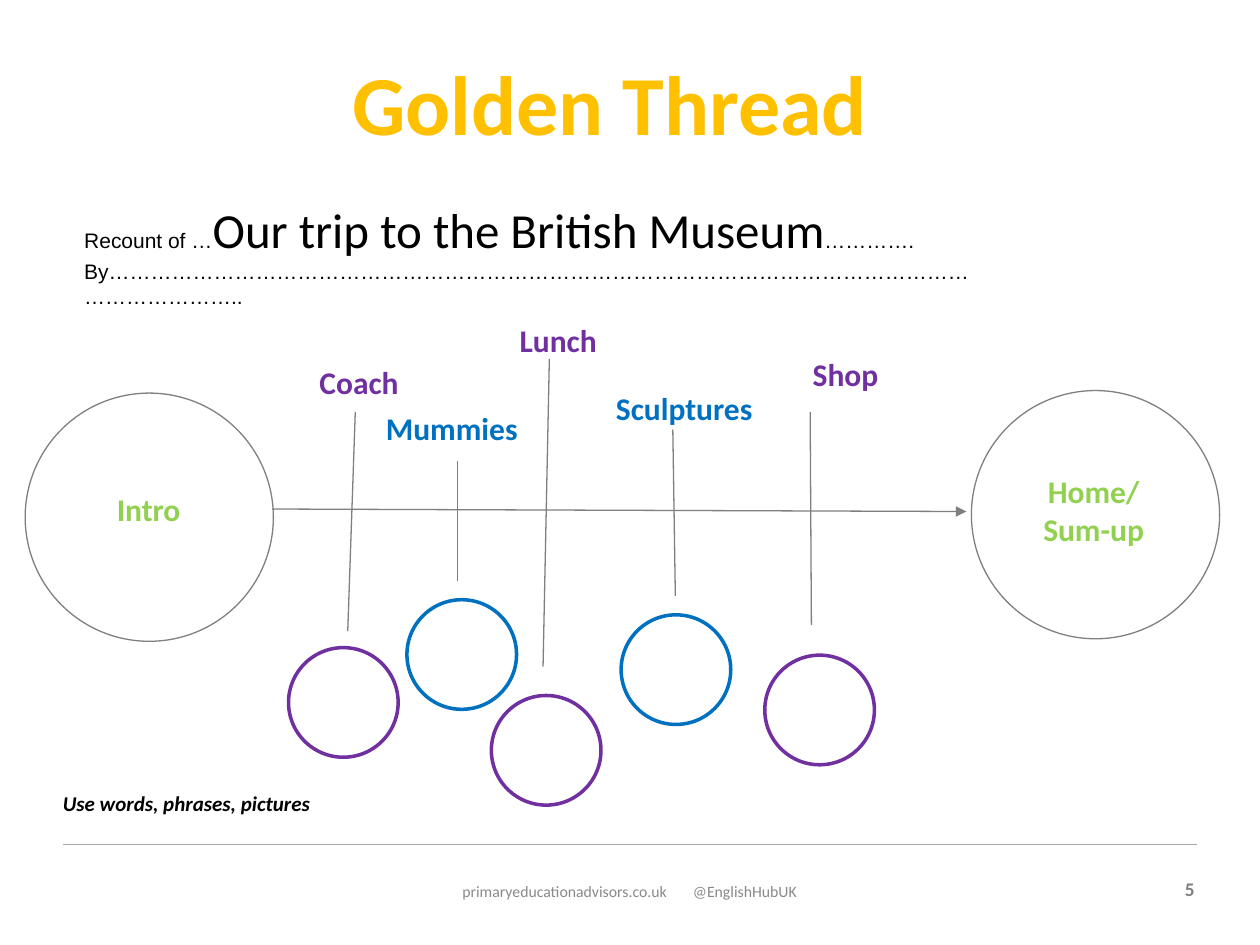
from lxml import etree
from pptx import Presentation
from pptx import util as u
from pptx.dml.color import RGBColor
from pptx.enum import shapes, text
from pptx.oxml.ns import qn

PX = 9144
GREY, PURPLE, BLUE, GREEN = "7F7F7F", "7030A0", "0070C0", "92D050"
LABEL_HEIGHT, DOT = 40, 87

EVENTS = [
    ("Coach", PURPLE, (233, 283, 104), (282, 327, 276, 501), (229, 514)),
    ("Mummies", BLUE, (289, 320, 139), (363, 366, 363, 461), (323, 476)),
    ("Lunch", PURPLE, (392, 250, 102), (436, 285, 431, 529), (390, 552)),
    ("Sculptures", BLUE, (462, 304, 162), (534, 341, 536, 473), (493, 488)),
    ("Shop", PURPLE, (619, 277, 104), (643, 327, 644, 496), (607, 520)),
]


def px(*lengths):
    return [u.Emu(length * PX) for length in lengths]


def paint(color, hex_value):
    color.rgb = RGBColor.from_string(hex_value)


def style(font, size, color, bold=False, italic=False, name="Calibri"):
    font.name, font.size = name, u.Pt(size)
    font.bold, font.italic = bold, italic
    paint(font.color, color)


def add_label(parent, words, box, size, color, bold=True, italic=False,
              align=text.PP_ALIGN.CENTER):
    frame = parent.add_textbox(*px(*box)).text_frame
    frame.word_wrap = True
    frame.text = words
    for paragraph in frame.paragraphs:
        paragraph.alignment = align
        style(paragraph.font, size, color, bold, italic)
    return frame


def add_line(parent, ends, color=GREY, arrow=False):
    line = parent.add_connector(shapes.MSO_CONNECTOR.STRAIGHT, *px(*ends))
    line.line.width = u.Pt(0.75)
    paint(line.line.color, color)
    properties = line.line._get_or_add_ln().getparent()
    etree.SubElement(properties, qn("a:effectLst"))
    if arrow:
        etree.SubElement(line.line._get_or_add_ln(), qn("a:tailEnd"), type="triangle")


def add_circle(parent, left, top, size, color, width, fill=None):
    circle = parent.add_shape(shapes.MSO_SHAPE.OVAL, *px(left, top, size, size))
    circle.shadow.inherit = False
    if fill:
        circle.fill.solid()
        paint(circle.fill.fore_color, fill)
    else:
        circle.fill.background()
    paint(circle.line.color, color)
    circle.line.width = u.Pt(width)


def add_title(slide):
    title = slide.shapes.title
    title.left, title.top, title.width, title.height = px(169, 36, 630, 91)
    frame = title.text_frame
    frame.text = "Golden Thread"
    frame.auto_size = text.MSO_AUTO_SIZE.NONE
    frame.vertical_anchor = text.MSO_ANCHOR.TOP
    frame.paragraphs[0].alignment = text.PP_ALIGN.CENTER
    style(frame.paragraphs[0].font, 48, "FFC000", bold=True)


def add_heading(parent):
    frame = parent.add_textbox(*px(57, 148, 725, 108)).text_frame
    frame.word_wrap = True
    frame.vertical_anchor = text.MSO_ANCHOR.MIDDLE
    recount = frame.paragraphs[0]
    for words, size, name in (
        ("Recount of …", 12, "Arial"),
        ("Our trip to the British Museum", 28, "Calibri"),
        ("………….", 12, "Arial"),
    ):
        run = recount.add_run()
        run.text = words
        style(run.font, size, "000000", name=name)
    author = frame.add_paragraph()
    author.text = "By" + "…" * 48 + ".."
    style(author.font, 12, "000000", name="Arial")


def add_footer(parent):
    add_line(parent, (50, 670, 950, 670), "A5A5A5")
    add_label(parent, "5", (920, 691, 38, 29), 11, GREY, align=text.PP_ALIGN.RIGHT)
    frame = parent.add_textbox(*px(331, 695, 338, 40)).text_frame
    frame.word_wrap = True
    frame.margin_left = px(36)[0]
    contact = frame.paragraphs[0]
    contact.text = "primaryeducationadvisors.co.uk\t@EnglishHubUK"
    tabs = etree.SubElement(contact._p.get_or_add_pPr(), qn("a:tabLst"))
    etree.SubElement(tabs, qn("a:tab"), pos=str(183 * PX), algn="l")
    style(contact.font, 9, "898989")


def add_timeline(parent):
    thread = parent.add_group_shape().shapes
    for left, top in ((20, 312), (771, 310)):
        add_circle(thread, left, top, 197, GREY, 0.75, "FFFFFF")
    add_line(thread, (216, 404, 767, 406), arrow=True)
    for _, _, _, stem, _ in EVENTS:
        add_line(thread, stem)


def add_events(parent):
    for name, color, (left, top, width), _, dot in EVENTS:
        add_label(parent, name, (left, top, width, LABEL_HEIGHT), 18, color)
        add_circle(parent, *dot, DOT, color, 2)


def main():
    deck = Presentation()
    deck.slide_width, deck.slide_height = px(1000, 750)
    slide = deck.slides.add_slide(deck.slide_layouts[5])
    parent = slide.shapes
    add_footer(parent)
    add_heading(parent)
    add_timeline(parent)
    hint = add_label(parent, "Use words, phrases, pictures", (40, 561, 220, 121),
                     12, "000000", italic=True, align=text.PP_ALIGN.LEFT)
    hint.vertical_anchor = text.MSO_ANCHOR.MIDDLE
    hint.margin_top = px(36)[0]
    add_title(slide)
    add_events(parent)
    add_label(parent, "Intro", (20, 384, 196, LABEL_HEIGHT), 18, GREEN)
    add_label(parent, "Home/\nSum-up", (797, 370, 142, 71), 18, GREEN)
    deck.save("out.pptx")


if __name__ == "__main__":
    main()
